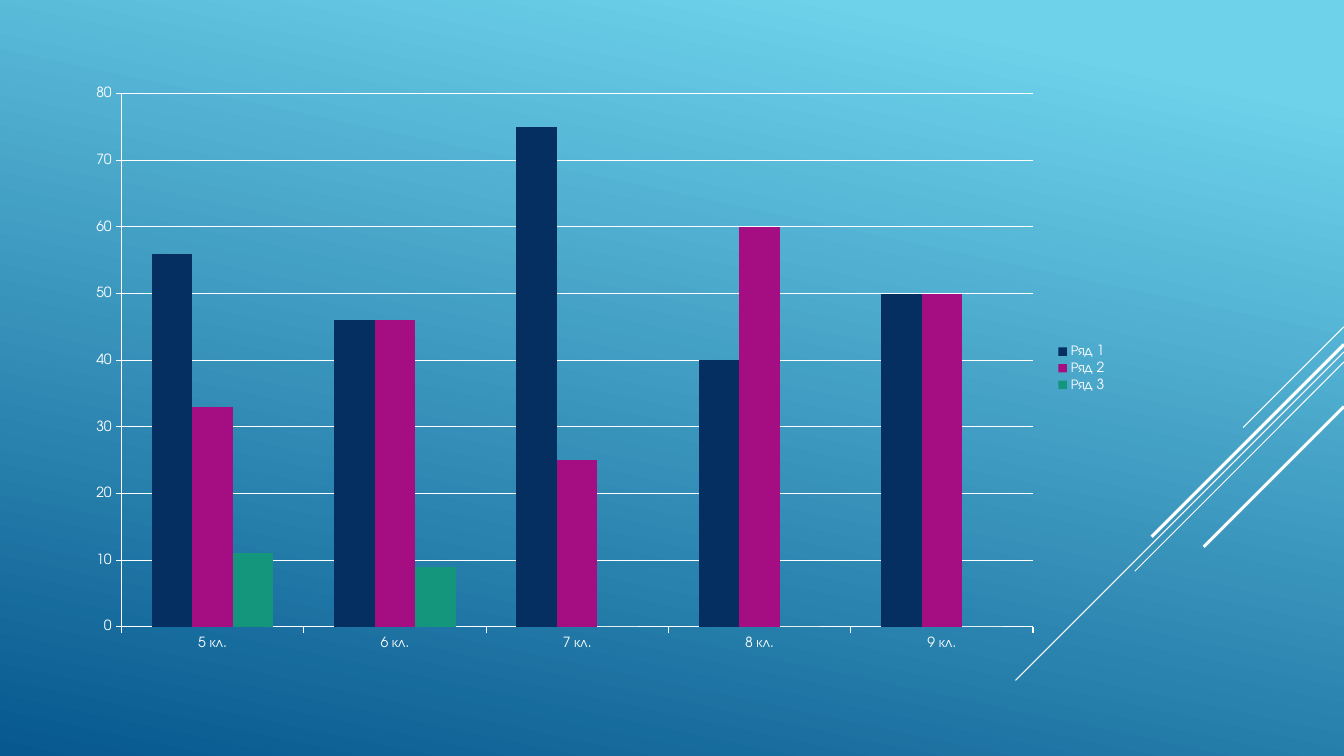
from lxml.etree import SubElement
from pptx import Presentation
from pptx.chart.data import CategoryChartData as ChartData
from pptx.dml.color import RGBColor
from pptx.enum.chart import XL_CHART_TYPE as ChartType
from pptx.enum.chart import XL_LEGEND_POSITION as LegendPosition
from pptx.enum.chart import XL_TICK_MARK as TickMark
from pptx.enum.shapes import MSO_CONNECTOR as Connector
from pptx.oxml.ns import qn
from pptx.util import Inches, Pt

WHITE = RGBColor(0xFF, 0xFF, 0xFF)
SKY = RGBColor(0x6E, 0xD2, 0xEB)
OCEAN = RGBColor(0x06, 0x58, 0x8E)
NAVY = RGBColor(0x05, 0x2F, 0x61)
MAGENTA = RGBColor(0xA5, 0x0E, 0x82)
GREEN = RGBColor(0x14, 0x96, 0x7C)

COLUMNS, ROWS = 160, 90
CELL = Inches(1) // 12

GRADES = ["5 кл.", "6 кл.", "7 кл.", "8 кл.", "9 кл."]
RESULTS = [
    ("Ряд 1", (56, 46, 75, 40, 50), NAVY),
    ("Ряд 2", (33, 46, 25, 60, 50), MAGENTA),
    ("Ряд 3", (11, 9, 0, 0, 0), GREEN),
]
STRIPES = [(38.9, 12, 0.75), (41.9, 39.1, 0.75), (43.1, 24.9, 0.75),
           (41, 22.9, 2.25), (48.4, 16.7, 2.25)]


def cells(*counts):
    """Turn counts of grid cells into lengths."""
    return [round(count * CELL) for count in counts]


class SlideBuilder:
    """Holds the style and the current slide."""

    font_name = "TeX Gyre Adventor"
    font_size = Pt(10)
    ink = WHITE
    hairline = Pt(0.75)

    def __init__(self, slide):
        """Keep the slide to draw on."""
        self.slide = slide

    def background(self, stops, angle):
        """Fill the slide with a two-colour gradient at a clockwise angle."""
        fill = self.slide.background.fill
        fill.gradient()
        fill.gradient_angle = 360 - angle
        for stop, (position, color) in zip(fill.gradient_stops, stops):
            stop.position = position
            stop.color.rgb = color

    def stripe(self, row, run, weight):
        """Draw a 45-degree line down and left from the right edge."""
        ends = cells(COLUMNS, row, COLUMNS - run, row + run)
        stripe = self.slide.shapes.add_connector(Connector.STRAIGHT, *ends)
        stripe.line.color.rgb = self.ink
        stripe.line.width = Pt(weight)
        SubElement(stripe._element.spPr, qn("a:effectLst"))

    def rule(self, line):
        """Style an axis line or a gridline."""
        line.color.rgb = self.ink
        line.width = self.hairline

    def column_chart(self, box, categories, results):
        """Add a clustered column chart with a legend on the right."""
        data = ChartData()
        data.categories = categories
        for name, values, _ in results:
            data.add_series(name, values)
        chart = self.slide.shapes.add_chart(
            ChartType.COLUMN_CLUSTERED, *cells(*box), data).chart
        chart.has_title = False
        chart.font.name = self.font_name
        chart.font.size = self.font_size
        chart.font.color.rgb = self.ink

        chart.has_legend = True
        chart.legend.position = LegendPosition.RIGHT
        chart.legend.include_in_layout = False

        for axis in (chart.category_axis, chart.value_axis):
            axis.major_tick_mark = TickMark.OUTSIDE
            axis.minor_tick_mark = TickMark.NONE
            self.rule(axis.format.line)
        scale = chart.value_axis
        scale.minimum_scale, scale.maximum_scale, scale.major_unit = 0, 80, 10
        scale.has_major_gridlines = True
        self.rule(scale.major_gridlines.format.line)

        plot = chart.plots[0]
        plot.gap_width = 150
        plot.vary_by_categories = False
        for series, (_, _, color) in zip(plot.series, results):
            series.format.fill.solid()
            series.format.fill.fore_color.rgb = color


def main():
    """Build the slide and save it."""
    deck = Presentation()
    deck.slide_width, deck.slide_height = cells(COLUMNS, ROWS)
    builder = SlideBuilder(deck.slides.add_slide(deck.slide_layouts[6]))
    builder.background([(0.1, SKY), (1, OCEAN)], 102)
    for row, run, weight in STRIPES:
        builder.stripe(row, run, weight)
    builder.column_chart((9, 9, 124, 69.7), GRADES, RESULTS)
    deck.save("out.pptx")


if __name__ == "__main__":
    main()
